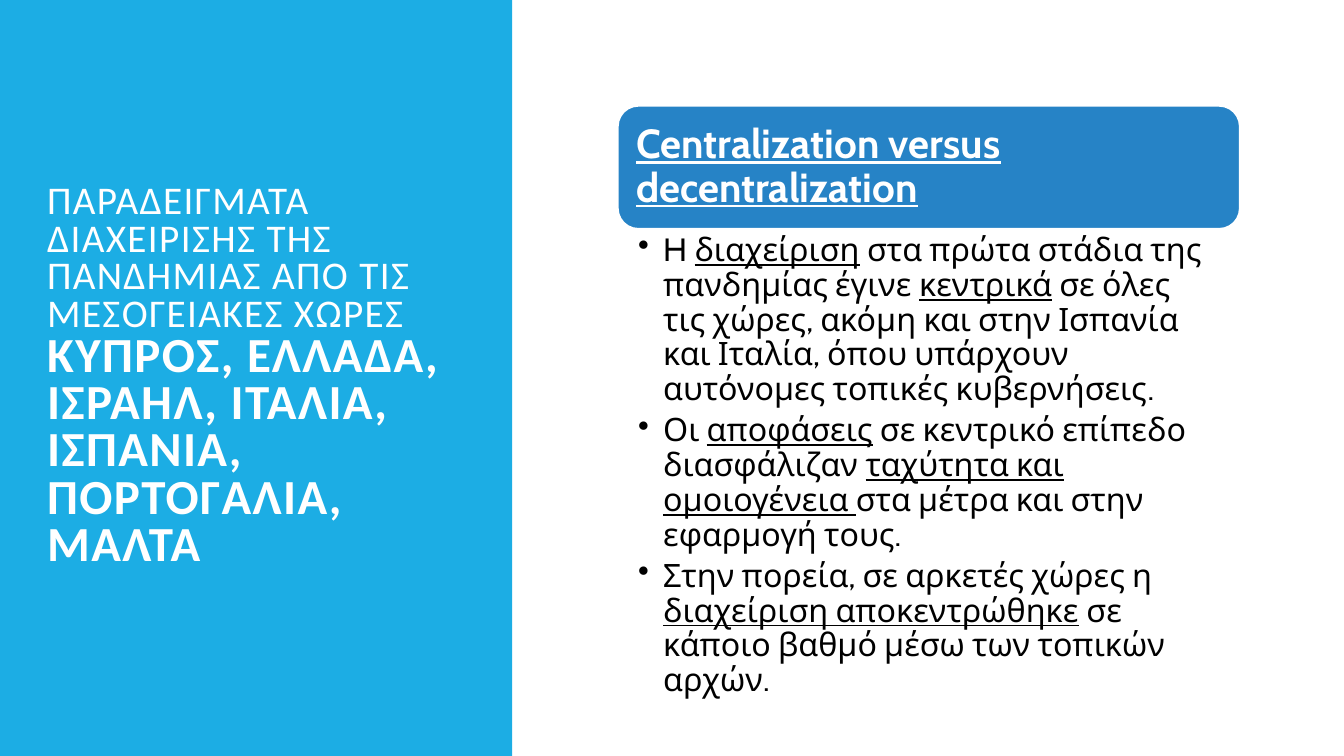
from dataclasses import dataclass

from lxml.etree import SubElement
from pptx import Presentation
from pptx.dml.color import RGBColor
from pptx.enum.shapes import MSO_SHAPE
from pptx.enum.text import MSO_ANCHOR
from pptx.oxml.ns import qn
from pptx.util import Pt


@dataclass(frozen=True)
class Theme:
    panel: RGBColor = RGBColor(0x1C, 0xAD, 0xE4)
    banner: RGBColor = RGBColor(0x26, 0x83, 0xC6)
    light: RGBColor = RGBColor(0xFF, 0xFF, 0xFF)
    dark: RGBColor = RGBColor(0, 0, 0)
    title_font: str = "Calibri"
    body_font: str = "Cabin"
    title_size: float = 28
    countries_size: float = 35
    heading_size: float = 29
    body_size: float = 23


@dataclass(frozen=True)
class Area:
    left: float
    top: float
    width: float
    height: float

    def lengths(self) -> tuple:
        return Pt(self.left), Pt(self.top), Pt(self.width), Pt(self.height)


@dataclass(frozen=True)
class Span:
    text: str
    underline: bool = False


THEME = Theme()
PAGE = Area(0, 0, 960, 540)
PANEL = Area(0, 0, 365.76, 540)
TITLE = Area(26.64, 50.4, 324, 438.48)
BANNER = Area(441.36, 75.6, 444.24, 87.84)
HEADING = Area(445.68, 79.92, 435.6, 79.2)
BODY = Area(441.36, 164.16, 444.24, 298.08)
BULLET_INDENT = 18

TITLE_TEXT = "ΠΑΡΑΔΕΙΓΜΑΤΑ ΔΙΑΧΕΙΡΙΣΗΣ ΤΗΣ ΠΑΝΔΗΜΙΑΣ ΑΠΟ ΤΙΣ ΜΕΣΟΓΕΙΑΚΕΣ ΧΩΡΕΣ"
COUNTRIES_TEXT = "ΚΥΠΡΟΣ, ΕΛΛΑΔΑ, ΙΣΡΑΗΛ, ΙΤΑΛΙΑ, ΙΣΠΑΝΙΑ, ΠΟΡΤΟΓΑΛΙΑ, ΜΑΛΤΑ"
HEADING_TEXT = "Centralization versus decentralization"
BULLETS = [
    [
        Span("H "),
        Span("διαχείριση", True),
        Span(" στα πρώτα στάδια της πανδημίας έγινε "),
        Span("κεντρικά", True),
        Span(" σε όλες τις χώρες, ακόμη και στην Ισπανία και Ιταλία, "
             "όπου υπάρχουν αυτόνομες τοπικές κυβερνήσεις."),
    ],
    [
        Span("Οι "),
        Span("αποφάσεις", True),
        Span(" σε κεντρικό επίπεδο διασφάλιζαν "),
        Span("ταχύτητα και ομοιογένεια ", True),
        Span("στα μέτρα και στην εφαρμογή τους."),
    ],
    [
        Span("Στην πορεία, σε αρκετές χώρες η "),
        Span("διαχείριση αποκεντρώθηκε", True),
        Span(" σε κάποιο βαθμό μέσω των τοπικών αρχών."),
    ],
]


def add_block(page, kind: MSO_SHAPE, area: Area, fill: RGBColor):
    block = page.shapes.add_shape(kind, *area.lengths())
    block.shadow.inherit = False
    block.fill.solid()
    block.fill.fore_color.rgb = fill
    block.line.fill.background()
    return block


def add_text_frame(page, area: Area, anchor: MSO_ANCHOR,
                   insets: tuple = (7.2, 3.6, 7.2, 3.6)):
    frame = page.shapes.add_textbox(*area.lengths()).text_frame
    frame.word_wrap = True
    frame.vertical_anchor = anchor
    (frame.margin_left, frame.margin_top,
     frame.margin_right, frame.margin_bottom) = map(Pt, insets)
    return frame


def style_font(font, name: str, color: RGBColor) -> None:
    font.name = name
    font.color.rgb = color


def add_title(page) -> None:
    frame = add_text_frame(page, TITLE, MSO_ANCHOR.MIDDLE)
    para = frame.paragraphs[0]
    para.line_spacing = 0.8
    style_font(para.font, THEME.title_font, THEME.light)
    lines = ((TITLE_TEXT, THEME.title_size, False),
             (COUNTRIES_TEXT, THEME.countries_size, True))
    for index, (text, size, bold) in enumerate(lines):
        if index:
            para.add_line_break()
        run = para.add_run()
        run.text = text
        run.font.size = Pt(size)
        run.font.bold = bold
        run.font._element.set("spc", "100")  # one point of letter spacing


def add_heading(page) -> None:
    frame = add_text_frame(page, HEADING, MSO_ANCHOR.MIDDLE, (8.64,) * 4)
    para = frame.paragraphs[0]
    para.text = HEADING_TEXT
    para.line_spacing = 0.9
    style_font(para.font, THEME.body_font, THEME.light)
    para.font.size = Pt(THEME.heading_size)
    para.font.bold = True
    para.font.underline = True


def add_bullets(page) -> None:
    frame = add_text_frame(page, BODY, MSO_ANCHOR.TOP, (14.4, 2.88, 16.56, 2.88))
    for index, spans in enumerate(BULLETS):
        para = frame.add_paragraph() if index else frame.paragraphs[0]
        para.level = 1
        para.line_spacing = 0.9
        para.space_after = Pt(THEME.body_size * 0.2)
        properties = para._p.get_or_add_pPr()
        properties.set("marL", str(Pt(BULLET_INDENT)))
        properties.set("indent", str(-Pt(BULLET_INDENT)))
        SubElement(properties, qn("a:buChar")).set("char", "•")
        style_font(para.font, THEME.body_font, THEME.dark)
        para.font.size = Pt(THEME.body_size)
        for span in spans:
            run = para.add_run()
            run.text = span.text
            if span.underline:
                run.font.underline = True


def main() -> None:
    deck = Presentation()
    deck.slide_width, deck.slide_height = Pt(PAGE.width), Pt(PAGE.height)
    page = deck.slides.add_slide(deck.slide_layouts[6])

    # Left panel with the title
    add_block(page, MSO_SHAPE.RECTANGLE, PANEL, THEME.panel)
    add_title(page)

    # Heading banner
    banner = add_block(page, MSO_SHAPE.ROUNDED_RECTANGLE, BANNER, THEME.banner)
    banner.line.color.rgb = THEME.light
    banner.line.width = Pt(1.25)
    add_heading(page)

    # Bulleted findings
    add_bullets(page)

    deck.save("out.pptx")


if __name__ == "__main__":
    main()
